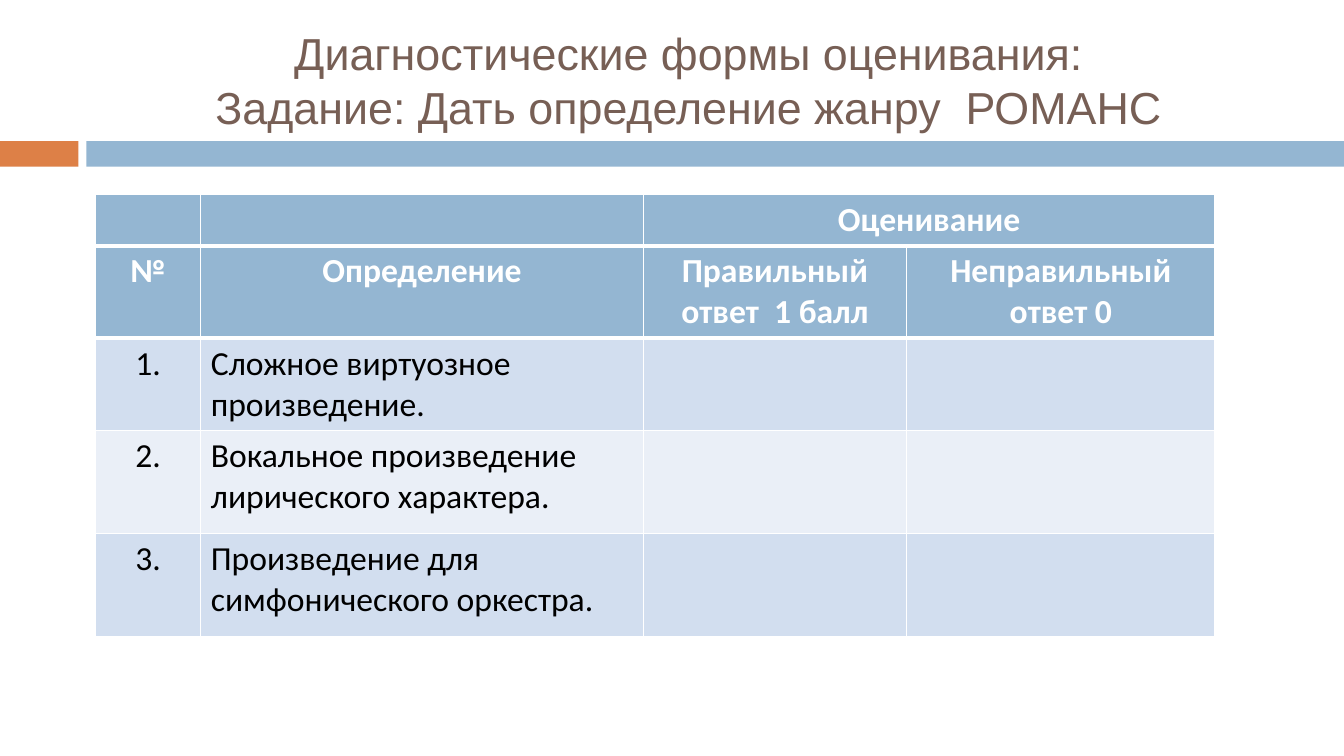
from lxml import etree
from pptx import Presentation
from pptx.dml.color import RGBColor
from pptx.enum import shapes, text
from pptx.oxml.ns import qn
from pptx.util import Cm, Pt

WHITE, BLUE, ORANGE, BROWN = "FFFFFF", "94B6D2", "DD8047", "775F55"
BANDS = ("D2DEEF", "EAEFF7")
HEADER_ROWS = 2
COL_WIDTHS = (2.66, 11.15, 6.64, 7.77)
ROW_HEIGHTS = (1.27, 2.32, 2.32, 2.6, 2.6)
ROWS = (
    ("", "", "Оценивание", ""),
    ("№", "Определение", "Правильный\nответ  1 балл", "Неправильный ответ 0"),
    ("1.", "Сложное виртуозное произведение.", "", ""),
    ("2.", "Вокальное произведение лирического характера.", "", ""),
    ("3.", "Произведение для симфонического оркестра.", "", ""),
)


def rgb(value):
    return RGBColor.from_string(value)


def style_paragraph(p, font, size, color, align, bold=False):
    p.alignment = align
    p.font.name, p.font.size, p.font.bold = font, Pt(size), bold
    p.font.color.rgb = rgb(color)


def add_title(s, x, y, w, h):
    title = s.shapes.title
    title.left, title.top, title.width, title.height = Cm(x), Cm(y), Cm(w), Cm(h)
    tf = title.text_frame
    tf.auto_size = text.MSO_AUTO_SIZE.NONE
    tf.vertical_anchor = text.MSO_ANCHOR.MIDDLE
    tf.text = "Диагностические формы оценивания:\vЗадание: Дать определение жанру  РОМАНС"
    style_paragraph(tf.paragraphs[0], "Arial", 32, BROWN, text.PP_ALIGN.CENTER)


def add_divider(s, x, y, w, h):
    """Draw a short orange block and a long blue bar across the box."""
    block, gap = 1.98, 0.2
    bar = block + gap
    for left, width, color in ((x, block, ORANGE), (x + bar, w - bar, BLUE)):
        sp = s.shapes.add_shape(
            shapes.MSO_SHAPE.RECTANGLE, Cm(left), Cm(y), Cm(width), Cm(h))
        sp.shadow.inherit = False
        sp.fill.solid()
        sp.fill.fore_color.rgb = rgb(color)
        sp.line.fill.background()


def set_borders(cell, top, bottom):
    """Give the cell white borders, 1 pt at the sides; must precede its fill."""
    tc_pr = cell._tc.get_or_add_tcPr()
    for tag, width in (("a:lnL", 1), ("a:lnR", 1), ("a:lnT", top), ("a:lnB", bottom)):
        ln = etree.SubElement(tc_pr, qn(tag), w=str(Pt(width)))
        fill = etree.SubElement(ln, qn("a:solidFill"))
        etree.SubElement(fill, qn("a:srgbClr"), val=WHITE)


def fill_cell(cell, words, row, col):
    header = row < HEADER_ROWS
    set_borders(cell, 3 if 0 < row <= HEADER_ROWS else 1, 3 if header else 1)
    cell.fill.solid()
    cell.fill.fore_color.rgb = rgb(BLUE if header else BANDS[(row - HEADER_ROWS) % 2])
    if words:
        cell.text = words
        centred = header or col == 0
        align = text.PP_ALIGN.CENTER if centred else text.PP_ALIGN.LEFT
        for p in cell.text_frame.paragraphs:
            style_paragraph(p, "Calibri", 24, WHITE if header else "000000", align, header)


def add_scoring_table(s, x, y):
    table = s.shapes.add_table(
        len(ROWS), len(COL_WIDTHS), Cm(x), Cm(y),
        Cm(sum(COL_WIDTHS)), Cm(sum(ROW_HEIGHTS))).table
    for column, width in zip(table.columns, COL_WIDTHS):
        column.width = Cm(width)
    for row, height in zip(table.rows, ROW_HEIGHTS):
        row.height = Cm(height)
    for i, row in enumerate(ROWS):
        for j, words in enumerate(row):
            fill_cell(table.cell(i, j), words, i, j)
    table.cell(0, 2).merge(table.cell(0, 3))


def main():
    prs = Presentation()
    prs.slide_width, prs.slide_height = Cm(33.87), Cm(19.05)
    s = prs.slides.add_slide(prs.slide_layouts[5])
    add_divider(s, 0, 3.56, 33.87, 0.64)
    add_title(s, 2.26, 0.64, 30.2, 2.74)
    add_scoring_table(s, 2.4, 4.91)
    prs.save("out.pptx")


if __name__ == "__main__":
    main()
